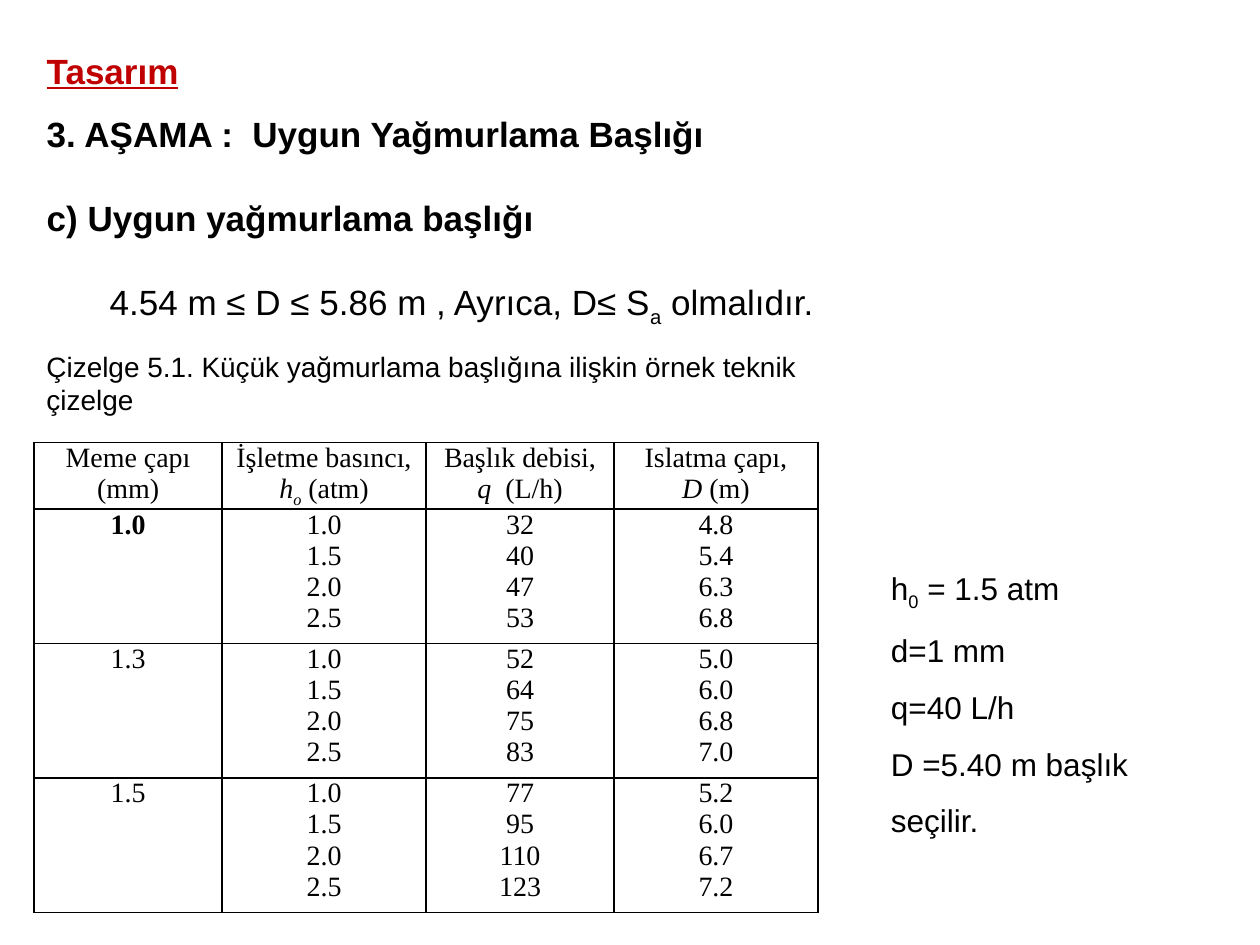
"""Build the sprinkler selection slide with its nozzle table and chosen values."""
import pptx
import pptx.dml.color
import pptx.enum.text
import pptx.oxml
import pptx.oxml.ns
import pptx.util

Pt = pptx.util.Pt
Align = pptx.enum.text.PP_ALIGN
Anchor = pptx.enum.text.MSO_ANCHOR
COLOURS = {"heading": "C00000", "text": "000000", "border": "000000"}
SUBSCRIPT = "-25000"


def write(frame, paragraphs, font_format, para_format, colour="text"):
    """Write paragraphs, each a list of (text, font overrides) spans."""
    for number, spans in enumerate(paragraphs):
        para = frame.paragraphs[0] if number == 0 else frame.add_paragraph()
        for name, value in para_format.items():
            setattr(para, name, value)
        for text, overrides in spans:
            span = para.add_run()
            span.text = text
            span.font.color.rgb = pptx.dml.color.RGBColor.from_string(COLOURS[colour])
            for name, value in {**font_format, **overrides}.items():
                if name == "baseline":
                    span._r.get_or_add_rPr().set("baseline", value)
                else:
                    setattr(span.font, name, value)


def place(box, left, top, width, height, anchor):
    """Set the position of a box and its text frame behaviour."""
    bounds = {"left": left, "top": top, "width": width, "height": height}
    for name, value in bounds.items():
        setattr(box, name, Pt(value))
    frame_format = {
        "word_wrap": True,
        "auto_size": pptx.enum.text.MSO_AUTO_SIZE.NONE,
        "vertical_anchor": anchor,
    }
    for name, value in frame_format.items():
        setattr(box.text_frame, name, value)
    return box.text_frame


deck = pptx.Presentation()
deck.slide_width, deck.slide_height = Pt(720), Pt(540)
page = deck.slides.add_slide(deck.slide_layouts[1])
title, body = page.placeholders

heading_font = {"name": "Arial", "size": Pt(20), "bold": True}
frame = place(title, 19.5, 24.5, 700.5, 31.5, Anchor.MIDDLE)
write(frame, [[("Tasarım", {"underline": True})]], heading_font,
      {"alignment": Align.JUSTIFY}, "heading")

plain = {"bold": False}
stages = [
    [("3. AŞAMA :  Uygun Yağmurlama Başlığı", {})],
    [("c) Uygun yağmurlama başlığı", {})],
    [
        ("4.54 m ≤ D ≤ 5.86 m , Ayrıca, D≤ S", plain),
        ("a", {**plain, "baseline": SUBSCRIPT}),
        (" olmalıdır.", plain),
    ],
]
frame = place(body, 19.5, 60.5, 641, 152.5, Anchor.TOP)
write(frame, stages, heading_font, {"alignment": Align.JUSTIFY, "space_before": Pt(24)})
frame.paragraphs[0].space_before = Pt(0)
for para, margin in zip(frame.paragraphs, (0, 0, 36)):
    properties = para._p.get_or_add_pPr()
    properties.set("marL", str(Pt(margin)))
    properties.set("indent", "0")
    properties.append(pptx.oxml.parse_xml(f"<a:buNone {pptx.oxml.ns.nsdecls('a')}/>"))

header = [
    [[("Meme çapı", {})], [("(mm)", {})]],
    [
        [("İşletme basıncı,", {})],
        [("h", {"italic": True}), ("o", {"italic": True, "baseline": SUBSCRIPT}), (" (atm)", {})],
    ],
    [[("Başlık debisi,", {})], [("q", {"italic": True}), ("  (L/h)", {})]],
    [[("Islatma çapı,", {})], [("D", {"italic": True}), (" (m)", {})]],
]
pressures = ["1.0", "1.5", "2.0", "2.5"]
nozzles = [
    ("1.0", ["32", "40", "47", "53"], ["4.8", "5.4", "6.3", "6.8"]),
    ("1.3", ["52", "64", "75", "83"], ["5.0", "6.0", "6.8", "7.0"]),
    ("1.5", ["77", "95", "110", "123"], ["5.2", "6.0", "6.7", "7.2"]),
]
rows = [header]
for diameter, flows, wetted in nozzles:
    columns = [[diameter], pressures, flows, wetted]
    rows.append([[[(value, {"bold": value == diameter == "1.0" and len(values) == 1})]
                  for value in values] for values in columns])

table = page.shapes.add_table(4, 4, Pt(19.5), Pt(252.75), Pt(448), Pt(269)).table
table.first_row = table.horz_banding = False
for column, width in zip(table.columns, (107.4, 116.6, 107.4, 116.6)):
    column.width = Pt(width)
for row, height in zip(table.rows, (38.2, 76.8, 76.8, 76.8)):
    row.height = Pt(height)

cell_format = {
    "margin_left": Pt(3.6), "margin_right": Pt(3.6),
    "margin_top": Pt(0), "margin_bottom": Pt(0),
    "vertical_anchor": Anchor.TOP,
}
for row, contents in zip(table.rows, rows):
    for cell, paragraphs in zip(row.cells, contents):
        for name, value in cell_format.items():
            setattr(cell, name, value)
        write(cell.text_frame, paragraphs, {"name": "Times New Roman", "size": Pt(16)},
              {"alignment": Align.CENTER})
        properties = cell._tc.get_or_add_tcPr()
        for side in ("lnL", "lnR", "lnT", "lnB"):
            properties.append(pptx.oxml.parse_xml(
                f'<a:{side} {pptx.oxml.ns.nsdecls("a")} w="{Pt(1)}"><a:solidFill>'
                f'<a:srgbClr val="{COLOURS["border"]}"/></a:solidFill></a:{side}>'))
        cell.fill.background()

caption = page.shapes.add_textbox(0, 0, 0, 0)
frame = place(caption, 19.5, 196, 471, 48, Anchor.TOP)
write(frame, [[("Çizelge 5.1. Küçük yağmurlama başlığına ilişkin örnek teknik çizelge", {})]],
      {"name": "Arial", "size": Pt(16)}, {"alignment": Align.LEFT})

choice = [
    [("h", {}), ("0", {"baseline": SUBSCRIPT}), (" = 1.5 atm", {})],
    [("d=1 mm", {})],
    [("q=40 L/h", {})],
    [("D =5.40 m başlık seçilir.", {})],
]
selection = page.shapes.add_textbox(0, 0, 0, 0)
frame = place(selection, 502, 309.5, 193, 167, Anchor.TOP)
write(frame, choice, {"name": "Arial", "size": Pt(18)}, {"line_spacing": 1.5})

deck.save("out.pptx")
